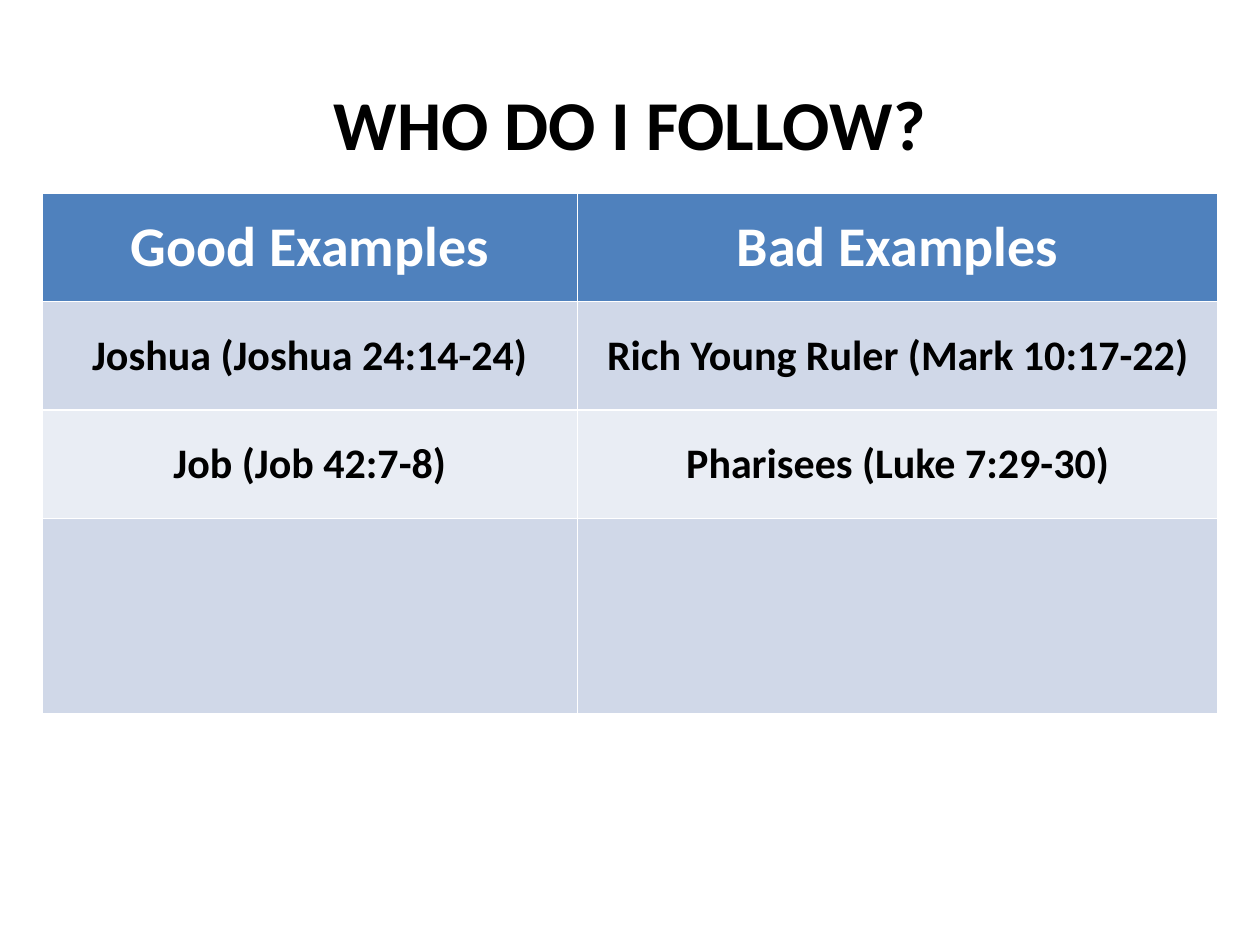
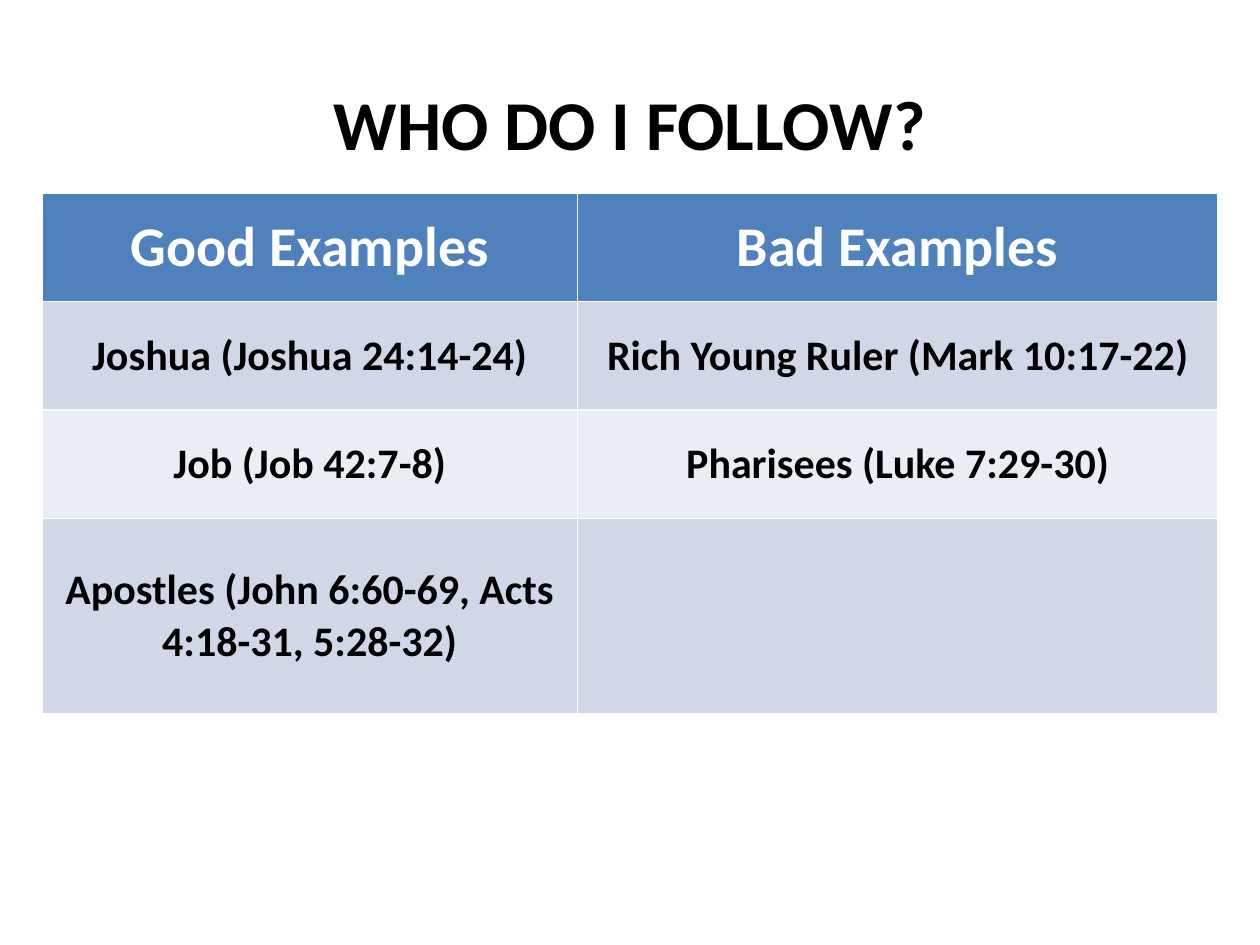
from pptx import Presentation
from pptx.dml.color import RGBColor
from pptx.enum.text import MSO_ANCHOR as Anchor, MSO_AUTO_SIZE as AutoSize, PP_ALIGN as Align
from pptx.util import Pt

# Shared style
FONT = "Calibri"
BLACK = RGBColor(0x00, 0x00, 0x00)
WHITE = RGBColor(0xFF, 0xFF, 0xFF)
HEADER_BLUE = RGBColor(0x4F, 0x81, 0xBD)
BAND_DARK = RGBColor(0xD0, 0xD8, 0xE8)
BAND_LIGHT = RGBColor(0xE9, 0xED, 0xF4)
ROW_FILLS = [HEADER_BLUE, BAND_DARK, BAND_LIGHT, BAND_DARK]
COLUMN_WIDTHS = [306, 366]
ROW_HEIGHTS = [62, 62, 62, 111.6]

# Table content: the second slide reveals one more good example
COMMON_ROWS = [
    ("Good Examples", "Bad Examples"),
    ("Joshua (Joshua 24:14-24)", "Rich Young Ruler (Mark 10:17-22)"),
    ("Job (Job 42:7-8)", "Pharisees (Luke 7:29-30)"),
]
LAST_ROWS = [
    ("", ""),
    ("Apostles (John 6:60-69, Acts 4:18-31, 5:28-32)", ""),
]


def write_text(text_frame, text, size=24, color=BLACK, bold=True, align=Align.CENTER):
    paragraph = text_frame.paragraphs[0]
    paragraph.alignment = align
    run = paragraph.add_run()
    run.text = text
    run.font.name = FONT
    run.font.size = Pt(size)
    run.font.bold = bold
    run.font.color.rgb = color


presentation = Presentation()
presentation.slide_width, presentation.slide_height = Pt(720), Pt(540)
title_only = presentation.slide_layouts[5]

for last_row in LAST_ROWS:
    slide = presentation.slides.add_slide(title_only)
    slide.background.fill.solid()
    slide.background.fill.fore_color.rgb = WHITE

    # Title
    title = slide.shapes.title
    title.left, title.top, title.width, title.height = Pt(0), Pt(42), Pt(720), Pt(55.5)
    title.text_frame.auto_size = AutoSize.NONE
    title.text_frame.vertical_anchor = Anchor.MIDDLE
    write_text(title.text_frame, "WHO DO I FOLLOW?", size=40)

    # Table: the default table style supplies the white rules
    rows = COMMON_ROWS + [last_row]
    table = slide.shapes.add_table(
        len(rows), len(COLUMN_WIDTHS), Pt(24), Pt(110.3),
        Pt(sum(COLUMN_WIDTHS)), Pt(sum(ROW_HEIGHTS))).table
    for column, width in zip(table.columns, COLUMN_WIDTHS):
        column.width = Pt(width)
    for row, height in zip(table.rows, ROW_HEIGHTS):
        row.height = Pt(height)

    for row_index, (texts, fill) in enumerate(zip(rows, ROW_FILLS)):
        is_header = row_index == 0
        for column_index, text in enumerate(texts):
            cell = table.cell(row_index, column_index)
            cell.fill.solid()
            cell.fill.fore_color.rgb = fill
            cell.vertical_anchor = Anchor.MIDDLE
            if text:
                write_text(cell.text_frame, text,
                           size=32 if is_header else 24,
                           color=WHITE if is_header else BLACK)

presentation.save("out.pptx")
